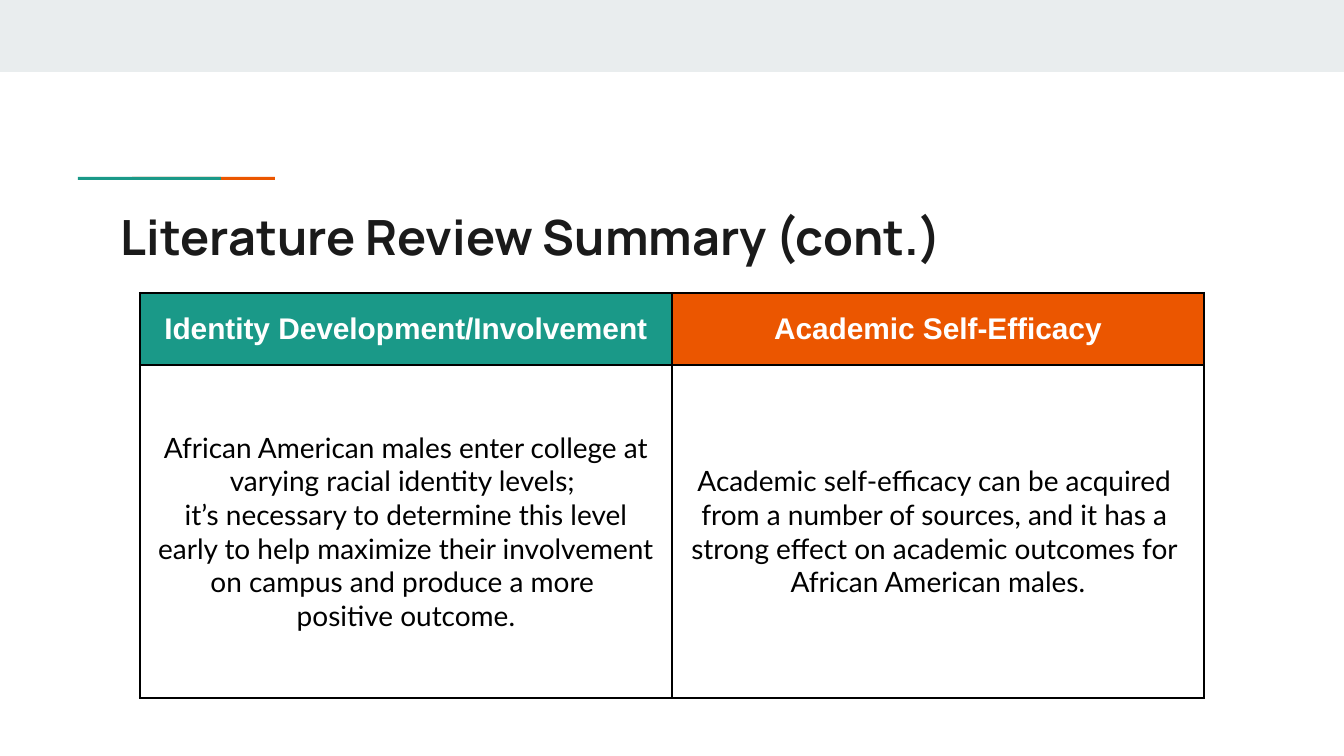
from lxml import etree
from pptx import Presentation
from pptx.dml.color import RGBColor
from pptx.enum.shapes import MSO_SHAPE
from pptx.enum.text import MSO_ANCHOR, PP_ALIGN
from pptx.oxml.ns import qn
from pptx.util import Emu, Pt

RECTANGLE = MSO_SHAPE.RECTANGLE
TOP, MIDDLE = MSO_ANCHOR.TOP, MSO_ANCHOR.MIDDLE
CENTER, LEFT = PP_ALIGN.CENTER, PP_ALIGN.LEFT

# Content
COLORS = {
    "band": "E9EDEE", "teal": "1A9988", "orange": "EB5600",
    "title": "1A1A1A", "white": "FFFFFF", "black": "000000",
}
TITLE = "Literature Review Summary (cont.)"
TOPICS = [
    ("Identity Development/Involvement", "teal", [
        "African American males enter college at varying racial identity levels; ",
        "it’s necessary to determine this level early to help maximize their "
        "involvement on campus and produce a more ",
        "positive outcome.",
    ]),
    ("Academic Self-Efficacy", "orange", [
        "Academic self-efficacy can be acquired ",
        "from a number of sources, and it has a ",
        "strong effect on academic outcomes for ",
        "African American males.",
    ]),
]

# Layout in px: left, top, width, height
SLIDE_WIDTH, SLIDE_HEIGHT = 1344, 756
BARS = [
    ((0, 0, SLIDE_WIDTH, 72), "band"),
    ((132, 177, 143, 3), "orange"),
    ((78, 177, 143, 3), "teal"),
]
TITLE_BOX = (108, 194, 1130, 79)
TABLE_LEFT, TABLE_TOP, COLUMN_WIDTH = 140, 293, 532
ROW_HEIGHTS = (72, 333)
INSET = 13
BORDER = Pt(1.5)


def px(value):
    return Emu(round(value * 914400 / 134.4))


def color(name):
    return RGBColor.from_string(COLORS[name])


def write(frame, lines, font_name, size, color_name, bold, align):
    frame.word_wrap = True
    for index, line in enumerate(lines):
        paragraph = frame.add_paragraph() if index else frame.paragraphs[0]
        paragraph.text = line
        paragraph.alignment = align
        font = paragraph.font
        font.name, font.size, font.bold = font_name, Pt(size), bold
        font.color.rgb = color(color_name)


def set_insets(target):
    target.margin_left = target.margin_right = px(INSET)
    target.margin_top = target.margin_bottom = px(INSET)


def add_borders(cell):
    properties = cell._tc.get_or_add_tcPr()
    for index, tag in enumerate(("a:lnL", "a:lnR", "a:lnT", "a:lnB")):
        line = etree.Element(qn(tag), w=str(BORDER))
        fill = etree.SubElement(line, qn("a:solidFill"))
        etree.SubElement(fill, qn("a:srgbClr"), val=COLORS["black"])
        properties.insert(index, line)


def fill_cell(cell, fill_name, lines, *style):
    cell.fill.solid()
    cell.fill.fore_color.rgb = color(fill_name)
    cell.vertical_anchor = MIDDLE
    set_insets(cell)
    write(cell.text_frame, lines, *style, CENTER)
    add_borders(cell)


presentation = Presentation()
presentation.slide_width = px(SLIDE_WIDTH)
presentation.slide_height = px(SLIDE_HEIGHT)
slide = presentation.slides.add_slide(presentation.slide_layouts[6])

# Top band and overlapping accent bars
for box, name in BARS:
    bar = slide.shapes.add_shape(RECTANGLE, *map(px, box))
    bar.shadow.inherit = False
    bar.fill.solid()
    bar.fill.fore_color.rgb = color(name)
    bar.line.fill.background()

# Title
title_frame = slide.shapes.add_textbox(*map(px, TITLE_BOX)).text_frame
title_frame.vertical_anchor = TOP
set_insets(title_frame)
write(title_frame, [TITLE], "Manrope", 26, "title", True, LEFT)

# Topic table
table = slide.shapes.add_table(
    len(ROW_HEIGHTS), len(TOPICS), px(TABLE_LEFT), px(TABLE_TOP),
    px(COLUMN_WIDTH * len(TOPICS)), px(sum(ROW_HEIGHTS))).table
for row, height in zip(table.rows, ROW_HEIGHTS):
    row.height = px(height)
for column, (heading, fill_name, lines) in enumerate(TOPICS):
    table.columns[column].width = px(COLUMN_WIDTH)
    fill_cell(table.cell(0, column), fill_name, [heading], "Arial", 16, "white", True)
    fill_cell(table.cell(1, column), "white", lines, "Lato", 15, "black", False)

presentation.save("out.pptx")
